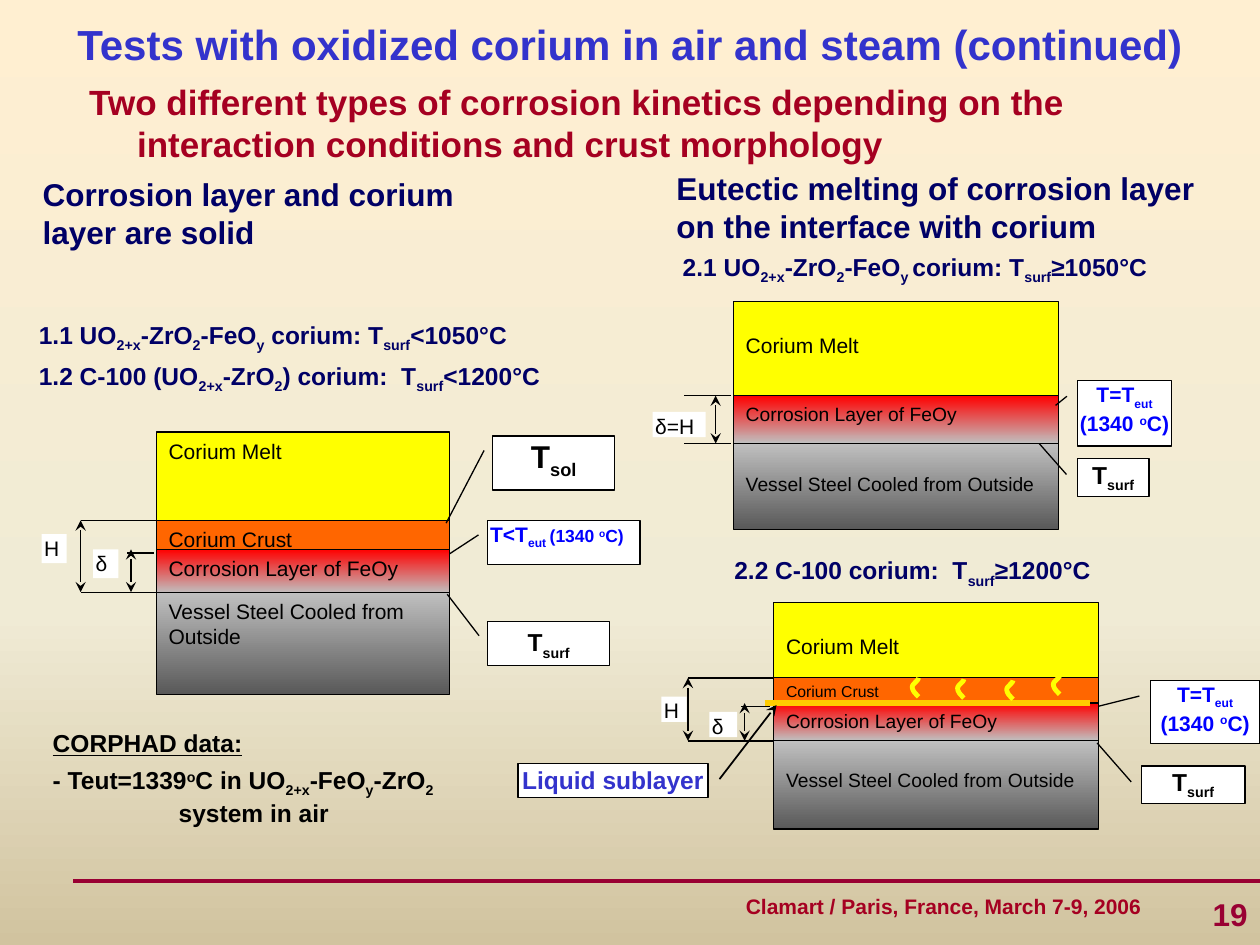
import copy
from dataclasses import dataclass
from typing import NamedTuple

from pptx import Presentation
from pptx.dml.color import RGBColor
from pptx.enum import shapes, text
from pptx.oxml.ns import qn
from pptx.util import Inches, Pt
from lxml import etree


@dataclass(frozen=True)
class Theme:
    font: str = "Arial"
    black: str = "000000"
    white: str = "FFFFFF"
    title: str = "3333CC"
    red: str = "A50021"
    rule: str = "990033"
    navy: str = "000066"
    blue: str = "0000FF"
    melt: str = "FFFF00"
    crust: str = "FF6600"
    sublayer: str = "FFCC00"
    corrosion: tuple = ((0, "FF0000"), (1, "C0C0C0"))
    steel: tuple = ((0, "C0C0C0"), (1, "595959"))
    page: tuple = ((0, "FFEFD1"), (0.65, "F0EBD5"), (1, "D1C39F"))
    h1: float = 24
    h2: float = 20
    h3: float = 18
    label: float = 14
    body: float = 12
    layer: float = 11
    small: float = 10
    tiny: float = 9


T = Theme()
WIDE, TIGHT, FLUSH = (0.1, 0.05), (0.02, 0.01), (0, 0.01)
LEFT, CENTER, RIGHT = text.PP_ALIGN.LEFT, text.PP_ALIGN.CENTER, text.PP_ALIGN.RIGHT


class Style(NamedTuple):
    size: float
    color: str = T.black
    bold: bool = False
    align: int = LEFT


class Layer(NamedTuple):
    top: float
    height: float
    name: str
    fill: object
    size: float = T.body
    inset: float = 0.05


class Stack(NamedTuple):
    left: float
    width: float
    layers: list


class Dimension(NamedTuple):
    """Double arrow at x, extension lines (from, to, y) and a symbol."""
    x: float
    top: float
    bottom: float
    ticks: list
    symbol: str
    box: tuple


class Callout(NamedTuple):
    box: tuple
    leader: tuple
    lines: list
    style: Style
    insets: tuple = TIGHT
    line_width: float = 0.75
    arrow: bool = False


def rgb(value: str) -> RGBColor:
    return RGBColor.from_string(value)


def paint(fill, value) -> None:
    """Solid colour, or top-to-bottom gradient for a tuple of stops."""
    if isinstance(value, str):
        fill.solid()
        fill.fore_color.rgb = rgb(value)
        return
    fill.gradient()
    fill.gradient_angle = 270
    first = fill.gradient_stops[0]._gs
    for _ in value[2:]:
        first.addnext(copy.deepcopy(first))
    for stop, (position, color) in zip(fill.gradient_stops, value):
        stop.position = position
        stop.color.rgb = rgb(color)


def arrowheads(sp, *ends: str) -> None:
    ln = sp.element.find(".//" + qn("a:ln"))
    for end in ends:
        etree.SubElement(ln, qn(f"a:{end}"), type="stealth")


def write(sp, lines: list, style: Style, insets=WIDE, anchor=text.MSO_ANCHOR.TOP) -> list:
    """In a line, | parts runs; a run starts with ~ small, _ subscript, ^ superscript."""
    tf = sp.text_frame
    tf.word_wrap = True
    tf.vertical_anchor = anchor
    tf.margin_left = tf.margin_right = Inches(insets[0])
    tf.margin_top = tf.margin_bottom = Inches(insets[1])
    for i, line in enumerate(lines):
        p = tf.add_paragraph() if i else tf.paragraphs[0]
        p.alignment = style.align
        for part in line.split("|"):
            r = p.add_run()
            size = T.small if part.startswith("~") else style.size
            part = part.removeprefix("~")
            r.text = part.lstrip("_^")
            f = r.font
            f.name, f.size, f.bold = T.font, Pt(size), style.bold
            f.color.rgb = rgb(style.color)
            shift = {"_": "-25000", "^": "30000"}.get(part[0])
            if shift:
                f._element.set("baseline", shift)
    return list(tf.paragraphs)


def add_text(s, box: tuple, lines: list, style: Style, hang=0.0, gap=0.0, **kw) -> list:
    paragraphs = write(s.shapes.add_textbox(*map(Inches, box)), lines, style, **kw)
    for i, p in enumerate(paragraphs):
        if hang:
            p._p.get_or_add_pPr().set("marL", str(Inches(hang)))
            p._p.get_or_add_pPr().set("indent", str(-Inches(hang)))
        if i and gap:
            p.space_before = Pt(gap)
    return paragraphs


def add_box(s, box: tuple, fill, width=0.75, kind=shapes.MSO_SHAPE.RECTANGLE):
    sp = s.shapes.add_shape(kind, *map(Inches, box))
    sp.shadow.inherit = False
    paint(sp.fill, fill)
    if width:
        sp.line.width = Pt(width)
        sp.line.color.rgb = rgb(T.black)
    else:
        sp.line.fill.background()
    return sp


def add_line(s, x1, y1, x2, y2, color=T.black, width=0.75):
    ln = s.shapes.add_connector(shapes.MSO_CONNECTOR.STRAIGHT, *map(Inches, (x1, y1, x2, y2)))
    ln.line.color.rgb = rgb(color)
    ln.line.width = Pt(width)
    etree.SubElement(ln.element.spPr, qn("a:effectLst"))
    return ln


def add_stack(s, stack: Stack) -> None:
    for layer in stack.layers:
        sp = add_box(s, (stack.left, layer.top, stack.width, layer.height), layer.fill)
        write(sp, [layer.name], Style(layer.size))
        sp.text_frame.margin_top = Inches(layer.inset)


def add_dimension(s, d: Dimension) -> None:
    for x1, x2, y in d.ticks:
        add_line(s, x1, y, x2, y)
    arrowheads(add_line(s, d.x, d.top, d.x, d.bottom), "headEnd", "tailEnd")
    write(add_box(s, d.box, T.white, width=0), [d.symbol], Style(T.body), TIGHT)


def add_callout(s, c: Callout) -> None:
    sp = add_box(s, c.box, T.white, c.line_width, shapes.MSO_SHAPE.LINE_CALLOUT_1)
    for i, value in enumerate(c.leader):
        sp.adjustments[i] = value
    if c.arrow:
        arrowheads(sp, "tailEnd")
    write(sp, c.lines, c.style, c.insets)


def add_streak(s, left: float, top: float) -> None:
    """Curved streak of melt, sampled from two Bezier arcs."""
    arcs = [((0.05, 0.15), (0.02, 0.12), (0, 0.1), (0, 0.07)),
            ((0, 0.07), (0, 0.05), (0.05, 0.02), (0.05, 0))]
    points = []
    for arc in arcs:
        for t in (i / 8 for i in range(9)):
            weights = ((1 - t) ** 3, 3 * t * (1 - t) ** 2, 3 * t * t * (1 - t), t ** 3)
            x, y = (sum(w * pt[axis] for w, pt in zip(weights, arc)) for axis in (0, 1))
            points.append((Inches(left + x), Inches(top + y)))
    builder = s.shapes.build_freeform(*points[0])
    builder.add_line_segments(points[1:], close=False)
    sp = builder.convert_to_shape()
    sp.shadow.inherit = False
    sp.fill.background()
    sp.line.color.rgb = rgb(T.melt)
    sp.line.width = Pt(2.75)


MELT, CRUST = "Corium Melt", "Corium Crust"
CORROSION, STEEL = "Corrosion Layer of FeOy", "Vessel Steel Cooled from Outside"
SURF, EUT = ["T|_surf"], ["T=T|_eut", "(1340 |^o|C)"]
HEAD = Style(T.h3, T.navy, True)
CASE = Style(T.label, T.navy, True)
TEMP = Style(T.label, bold=True, align=CENTER)
EUTECTIC = Style(T.body, T.blue, True, CENTER)

STACKS = [
    Stack(1.24, 2.33, [Layer(3.43, 0.7, MELT, T.melt), Layer(4.13, 0.23, CRUST, T.crust),
                       Layer(4.36, 0.35, CORROSION, T.corrosion), Layer(4.7, 0.81, STEEL, T.steel)]),
    Stack(5.82, 2.58, [Layer(2.39, 0.75, MELT, T.melt, inset=0.25),
                       Layer(3.14, 0.38, CORROSION, T.corrosion, T.layer),
                       Layer(3.52, 0.68, STEEL, T.steel, T.layer, 0.23)]),
    Stack(6.14, 2.58, [Layer(4.78, 0.6, MELT, T.melt, inset=0.25),
                       Layer(5.38, 0.2, CRUST, T.crust, T.tiny, 0.03),
                       Layer(5.58, 0.3, CORROSION, T.corrosion, T.layer),
                       Layer(5.88, 0.7, STEEL, T.steel, T.layer, 0.22)]),
]
DIMENSIONS = [
    Dimension(0.64, 4.13, 4.7, [(1.24, 0.64, 4.13), (1.24, 0.64, 4.7)], "H", (0.33, 4.24, 0.2, 0.23)),
    Dimension(1.04, 4.36, 4.7, [(1.22, 1.01, 4.39)], "δ", (0.74, 4.36, 0.2, 0.23)),
    Dimension(5.68, 3.14, 3.52, [(5.8, 5.43, 3.14), (5.8, 5.43, 3.52)], "δ=H", (5.18, 3.27, 0.42, 0.2)),
    Dimension(5.46, 5.38, 5.88, [(6.14, 5.46, 5.38), (6.14, 5.46, 5.88)], "H", (5.25, 5.53, 0.2, 0.2)),
    Dimension(5.91, 5.58, 5.88, [(6.11, 5.88, 5.61)], "δ", (5.63, 5.65, 0.22, 0.2)),
]
CALLOUTS = [
    Callout((3.91, 3.46, 0.97, 0.43), (0.27, -0.07, 1.61, -0.38), ["T|_sol"], TEMP._replace(size=T.h3)),
    Callout((3.87, 4.13, 1.21, 0.35), (0.33, -0.06, 0.76, -0.25), ["T<T|_eut |~(1340 |~^o|~C)"],
            EUTECTIC._replace(align=LEFT)),
    Callout((3.87, 4.93, 0.97, 0.35), (0.33, -0.07, -0.61, -0.33), SURF, TEMP, WIDE),
    Callout((8.55, 3.02, 0.75, 0.52), (0.24, -0.11, 0.38, -0.23), EUT, EUTECTIC, FLUSH),
    Callout((8.55, 3.64, 0.57, 0.3), (0.42, -0.15, -0.4, -0.53), SURF, TEMP),
    Callout((9.13, 5.4, 0.87, 0.5), (0.25, -0.1, 0.41, -0.47), EUT, EUTECTIC),
    Callout((9.06, 6.08, 0.82, 0.3), (0.42, -0.1, -0.61, -0.43), SURF, TEMP),
    Callout((4.11, 6.06, 1.51, 0.27), (0.46, 1.06, -1.72, 1.36), ["Liquid sublayer"],
            TEMP._replace(color=T.title), line_width=1, arrow=True),
]
STREAKS = [(7.24, 5.38), (7.6, 5.39), (7.99, 5.4), (8.36, 5.36)]


def main() -> None:
    prs = Presentation()
    prs.slide_width, prs.slide_height = Inches(10), Inches(7.5)
    s = prs.slides.add_slide(prs.slide_layouts[6])
    paint(s.background.fill, T.page)

    # Footer
    add_line(s, 0.58, 6.99, 10, 6.99, T.rule, 2.25)
    add_text(s, (5.82, 7.04, 3.34, 0.3), ["Clamart / Paris, France, March 7-9, 2006"],
             Style(T.body, T.red, True, CENTER))
    middle = text.MSO_ANCHOR.MIDDLE
    add_text(s, (7.92, 7, 2.08, 0.5), ["19"], Style(T.h3, T.rule, True, RIGHT), anchor=middle)

    # Headings
    add_text(s, (0, 0, 10, 0.7), ["Tests with oxidized corium in air and steam (continued)"],
             Style(T.h1, T.title, True, CENTER), anchor=middle)
    add_text(s, (0.61, 0.59, 9.39, 0.49),
             ["Two different types of corrosion kinetics depending on the interaction conditions "
              "and crust morphology"], Style(T.h2, T.red, True), hang=0.38)
    add_text(s, (0.24, 1.34, 3.68, 0.85), ["Corrosion layer and corium layer are solid"], HEAD, hang=-0.01)
    add_text(s, (5.27, 1.29, 4.39, 1.1),
             ["Eutectic melting of corrosion layer on the interface with corium"], HEAD, hang=-0.01)

    # Case captions
    add_text(s, (0.21, 2.49, 4.62, 1.38),
             ["1.1 UO|_2+x|-ZrO|_2|-FeO|_y| corium: T|_surf|<1050°C",
              "1.2 C-100 (UO|_2+x|-ZrO|_2|) corium:  T|_surf|<1200°C"], CASE, hang=0.38, gap=4.2)
    add_text(s, (5.32, 1.95, 4.39, 0.48),
             ["2.1 UO|_2+x|-ZrO|_2|-FeO|_y |corium: T|_surf|≥1050°C"], CASE, hang=0.38)
    add_text(s, (5.73, 4.36, 3.04, 0.33), ["2.2 C-100 corium:  T|_surf|≥1200°C"], CASE)

    # Layer diagrams
    for stack in STACKS:
        add_stack(s, stack)
    for dimension in DIMENSIONS:
        add_dimension(s, dimension)
    add_line(s, 6.07, 5.58, 8.65, 5.58, T.sublayer, 3.25)
    for callout in CALLOUTS:
        add_callout(s, callout)
    for left, top in STREAKS:
        add_streak(s, left, top)

    # Experimental data
    heading, result, setting = add_text(
        s, (0.32, 5.73, 3.51, 0.87),
        ["CORPHAD data:", "- Teut=1339|^o|C in UO|_2+x|-FeO|_y|-ZrO|_2", "system in air"],
        Style(T.label, bold=True))
    heading.runs[0].font.underline = True
    result.space_before = Pt(4.2)
    setting._p.get_or_add_pPr().set("marL", str(Inches(1)))

    prs.save("out.pptx")


if __name__ == "__main__":
    main()
